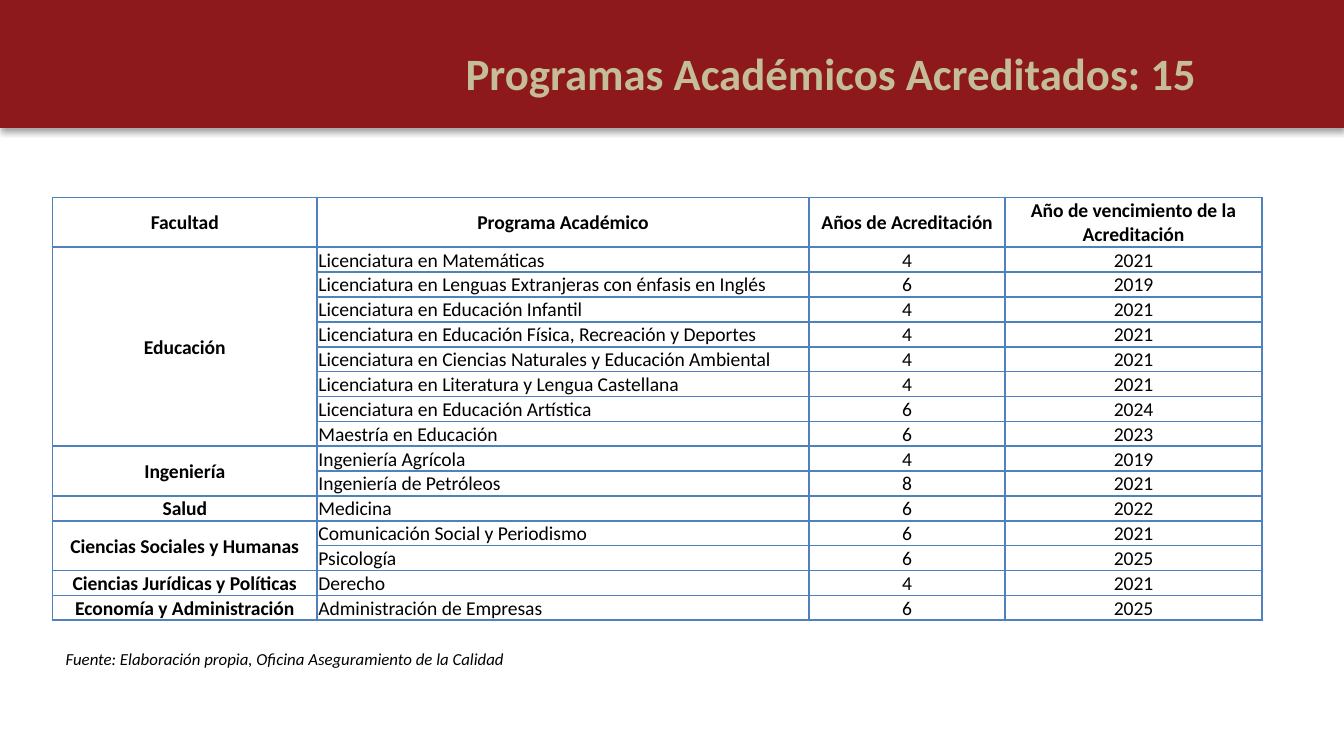
import pptx
import pptx.dml.color
import pptx.enum.shapes
import pptx.enum.text
import pptx.oxml
import pptx.oxml.ns
import pptx.util

COLORS = {
    "band": "8D191D",
    "title": "C4BD97",
    "text": "000000",
    "cell": "FFFFFF",
    "border": "4F81BD",
}
FONT = "Calibri"
WIDTH = 10
HEIGHT = WIDTH * 9 / 16
MARGIN = 0.39
COLUMN_WIDTHS = [1.97, 3.66, 1.46, 1.91]
HEADER_HEIGHT, ROW_HEIGHT = 0.37, 0.18
HEADERS = [
    "Facultad",
    "Programa Académico",
    "Años de Acreditación",
    "Año de vencimiento de la Acreditación",
]
FACULTIES = {
    "Educación": [
        ("Licenciatura en Matemáticas", 4, 2021),
        ("Licenciatura en Lenguas Extranjeras con énfasis en Inglés", 6, 2019),
        ("Licenciatura en Educación Infantil", 4, 2021),
        ("Licenciatura en Educación Física, Recreación y Deportes", 4, 2021),
        ("Licenciatura en Ciencias Naturales y Educación Ambiental", 4, 2021),
        ("Licenciatura en Literatura y Lengua Castellana", 4, 2021),
        ("Licenciatura en Educación Artística", 6, 2024),
        ("Maestría en Educación", 6, 2023),
    ],
    "Ingeniería": [
        ("Ingeniería Agrícola", 4, 2019),
        ("Ingeniería de Petróleos", 8, 2021),
    ],
    "Salud": [("Medicina", 6, 2022)],
    "Ciencias Sociales y Humanas": [
        ("Comunicación Social y Periodismo", 6, 2021),
        ("Psicología", 6, 2025),
    ],
    "Ciencias Jurídicas y Políticas": [("Derecho", 4, 2021)],
    "Economía y Administración": [("Administración de Empresas", 6, 2025)],
}


def inches(*lengths):
    """Convert lengths in inches to slide units."""
    return [pptx.util.Inches(length) for length in lengths]


def color(name):
    """Return a named colour of the slide."""
    return pptx.dml.color.RGBColor.from_string(COLORS[name])


def write(text_frame, text, size, color_name="text", bold=False, italic=False, centered=False):
    """Put one formatted paragraph in a text frame."""
    text_frame.text = text
    paragraph = text_frame.paragraphs[0]
    alignment = pptx.enum.text.PP_ALIGN
    paragraph.alignment = alignment.CENTER if centered else alignment.LEFT
    for run in paragraph.runs:
        run.font.name = FONT
        run.font.size = pptx.util.Pt(size)
        run.font.bold = bold
        run.font.italic = italic
        run.font.color.rgb = color(color_name)


def add_band(slide):
    """Add the shadowed band behind the title."""
    band = slide.shapes.add_shape(
        pptx.enum.shapes.MSO_SHAPE.RECTANGLE, *inches(0, 0, WIDTH, 0.95)
    )
    band.fill.solid()
    band.fill.fore_color.rgb = color("band")
    band.line.color.rgb = color("band")
    band.line.width = pptx.util.Pt(0.75)
    band.element.spPr.append(pptx.oxml.parse_xml(
        f'<a:effectLst {pptx.oxml.ns.nsdecls("a")}>'
        f'<a:outerShdw blurRad="{pptx.util.Pt(3.1)}" dist="{pptx.util.Pt(1.8)}" '
        'dir="5400000" rotWithShape="0"><a:srgbClr val="000000">'
        '<a:alpha val="35000"/></a:srgbClr></a:outerShdw></a:effectLst>'
    ))
    slide.shapes.element.insert(2, band.element)


def set_title(slide, text):
    """Place and format the title placeholder."""
    title = slide.shapes.title
    title.left, title.top, title.width, title.height = inches(2.95, 0.29, 6.54, 0.63)
    write(title.text_frame, text, 24, "title", bold=True, centered=True)
    title.text_frame.vertical_anchor = pptx.enum.text.MSO_ANCHOR.TOP
    title.text_frame.auto_size = pptx.enum.text.MSO_AUTO_SIZE.NONE


def add_source_note(slide, text):
    """Add the source line under the table."""
    note = slide.shapes.add_textbox(*inches(MARGIN, 4.78, 3.5, 0.25))
    write(note.text_frame, text, 9, italic=True)
    note.text_frame.word_wrap = False
    note.text_frame.auto_size = pptx.enum.text.MSO_AUTO_SIZE.SHAPE_TO_FIT_TEXT


def format_cell(cell):
    """Give a cell its borders, fill and insets."""
    properties = cell._tc.get_or_add_tcPr()
    for side in "LRTB":
        properties.append(pptx.oxml.parse_xml(
            f'<a:ln{side} {pptx.oxml.ns.nsdecls("a")} w="{pptx.util.Pt(1)}"><a:solidFill>'
            f'<a:srgbClr val="{COLORS["border"]}"/></a:solidFill></a:ln{side}>'
        ))
    cell.fill.solid()
    cell.fill.fore_color.rgb = color("cell")
    cell.margin_left, cell.margin_right, cell.margin_top, cell.margin_bottom = inches(
        0.01, 0.01, 0.01, 0
    )
    cell.text_frame.paragraphs[0].font.size = pptx.util.Pt(10.5)


def write_cell(cell, text, heading=False, centered=True):
    """Write a heading or a value in a cell."""
    write(cell.text_frame, text, 10.5, bold=heading, centered=centered)
    anchor = pptx.enum.text.MSO_ANCHOR
    cell.vertical_anchor = anchor.MIDDLE if heading else anchor.BOTTOM


def add_program_table(slide):
    """Add the table of programs grouped by faculty."""
    program_count = sum(len(programs) for programs in FACULTIES.values())
    height = HEADER_HEIGHT + program_count * ROW_HEIGHT
    table = slide.shapes.add_table(
        program_count + 1, len(HEADERS), *inches(MARGIN, 1.47, sum(COLUMN_WIDTHS), height)
    ).table
    for column, width in zip(table.columns, COLUMN_WIDTHS):
        column.width = pptx.util.Inches(width)
    for index, row in enumerate(table.rows):
        row.height = pptx.util.Inches(ROW_HEIGHT if index else HEADER_HEIGHT)
    for cell in table.iter_cells():
        format_cell(cell)
    for column_index, header in enumerate(HEADERS):
        write_cell(table.cell(0, column_index), header, heading=True)
    row_index = 1
    for faculty, programs in FACULTIES.items():
        faculty_cell = table.cell(row_index, 0)
        if len(programs) > 1:
            faculty_cell.merge(table.cell(row_index + len(programs) - 1, 0))
        write_cell(faculty_cell, faculty, heading=True)
        for program in programs:
            for column_index, value in enumerate(program, start=1):
                write_cell(
                    table.cell(row_index, column_index), str(value), centered=column_index > 1
                )
            row_index += 1


def main():
    """Build and save the slide."""
    presentation = pptx.Presentation()
    presentation.slide_width, presentation.slide_height = inches(WIDTH, HEIGHT)
    slide = presentation.slides.add_slide(presentation.slide_layouts.get_by_name("Title Only"))
    add_band(slide)
    set_title(slide, "Programas Académicos Acreditados: 15 ")
    add_source_note(slide, "Fuente: Elaboración propia, Oficina Aseguramiento de la Calidad")
    add_program_table(slide)
    presentation.save("out.pptx")


if __name__ == "__main__":
    main()
